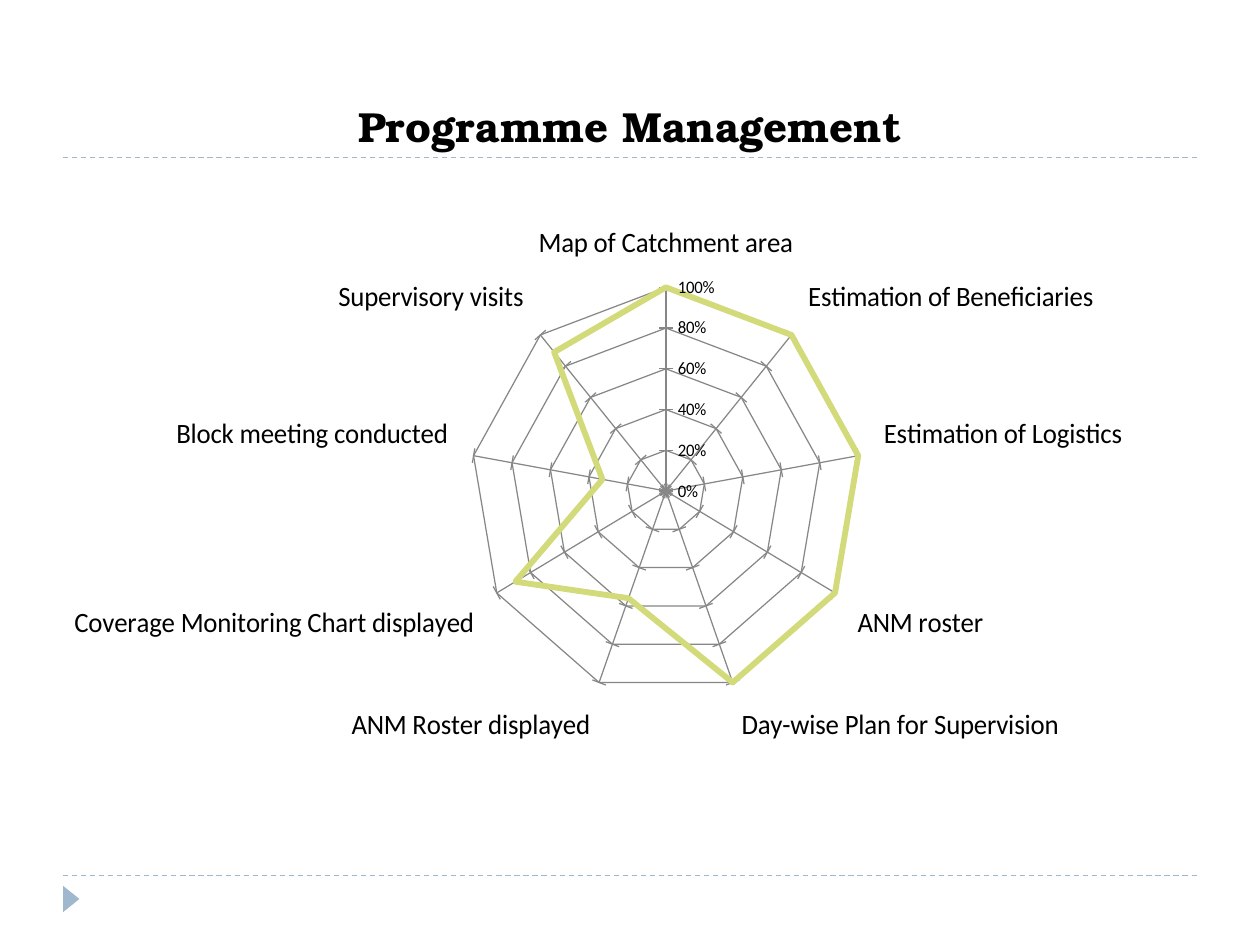
from dataclasses import dataclass

from lxml import etree
from pptx import Presentation
from pptx import util as u
from pptx.chart.chart import Chart
from pptx.chart.data import CategoryChartData
from pptx.dml.color import RGBColor
from pptx.enum import chart as charts
from pptx.enum import dml, shapes, text
from pptx.oxml import parse_xml
from pptx.oxml.ns import nsdecls, qn
from pptx.slide import Slide


@dataclass(frozen=True)
class Theme:
    ink: RGBColor = RGBColor(0x00, 0x00, 0x00)
    accent: RGBColor = RGBColor(0x9F, 0xB8, 0xCD)
    grid: RGBColor = RGBColor(0x87, 0x87, 0x87)
    series: RGBColor = RGBColor(0xD2, 0xDA, 0x7A)
    title_font: str = "TeX Gyre Bonum"
    chart_font: str = "Calibri"
    title_size: float = 24
    category_size: float = 16
    value_size: float = 10
    hairline: float = 0.75
    series_width: float = 3.5


@dataclass(frozen=True)
class Box:
    left: float
    top: float
    width: float
    height: float

    def points(self) -> tuple:
        return tuple(map(u.Pt, (self.left, self.top, self.width, self.height)))


@dataclass(frozen=True)
class Indicator:
    name: str
    share: float


THEME = Theme()
RULE_TOPS = (500.4, 90)
MARGIN = 36
CONTENT_WIDTH = 648
TITLE_BOX = Box(MARGIN, 12.24, CONTENT_WIDTH, 77.76)
CHART_BOX = Box(42.5, 71.3, CONTENT_WIDTH, 388.8)
MARKER_BOX = Box(33.12, 509.04, 15.12, 9.36)
PLOT_FRACTIONS = {"x": 0.285, "y": 0.239, "w": 0.432, "h": 0.599}
INDICATORS = (
    Indicator("Map of Catchment area", 1),
    Indicator("Estimation of Beneficiaries", 1),
    Indicator("Estimation of Logistics", 1),
    Indicator("ANM roster", 1),
    Indicator("Day-wise Plan for Supervision", 1),
    Indicator("ANM Roster displayed", 0.56),
    Indicator("Coverage Monitoring Chart displayed", 0.89),
    Indicator("Block meeting conducted", 0.33),
    Indicator("Supervisory visits", 0.89),
)


def add_rule(slide: Slide, top: float) -> None:
    rule = slide.shapes.add_connector(
        shapes.MSO_CONNECTOR.STRAIGHT,
        u.Pt(MARGIN), u.Pt(top), u.Pt(MARGIN + CONTENT_WIDTH), u.Pt(top),
    )
    rule.line.color.rgb = THEME.accent
    rule.line.width = u.Pt(THEME.hairline)
    rule.line.dash_style = dml.MSO_LINE.DASH
    etree.SubElement(rule._element.spPr, qn("a:effectLst"))


def add_marker(slide: Slide) -> None:
    marker = slide.shapes.add_shape(
        shapes.MSO_SHAPE.ISOSCELES_TRIANGLE, *MARKER_BOX.points()
    )
    marker.rotation = 90
    marker.shadow.inherit = False
    marker.fill.solid()
    marker.fill.fore_color.rgb = THEME.accent
    marker.line.fill.background()


def add_title(slide: Slide, wording: str) -> None:
    frame = slide.shapes.add_textbox(*TITLE_BOX.points()).text_frame
    frame.word_wrap = True
    frame.vertical_anchor = text.MSO_ANCHOR.BOTTOM
    frame.text = wording
    paragraph = frame.paragraphs[0]
    paragraph.alignment = text.PP_ALIGN.CENTER
    font = paragraph.runs[0].font
    font.name = THEME.title_font
    font.size = u.Pt(THEME.title_size)
    font.bold = True
    font.color.rgb = THEME.ink


def place_plot(chart: Chart) -> None:
    modes = "".join(f'<c:{axis}Mode val="edge"/>' for axis in "xy")
    sizes = "".join(
        f'<c:{key} val="{value}"/>' for key, value in PLOT_FRACTIONS.items()
    )
    layout = parse_xml(
        f'<c:layout {nsdecls("c")}><c:manualLayout><c:layoutTarget val="inner"/>'
        f"{modes}{sizes}</c:manualLayout></c:layout>"
    )
    plot_area = chart._chartSpace.chart.plotArea
    for existing in plot_area.findall(qn("c:layout")):
        plot_area.remove(existing)
    plot_area.insert(0, layout)


def style_axis(axis, size: float) -> None:
    axis.has_major_gridlines = True
    axis.major_tick_mark = charts.XL_TICK_MARK.CROSS
    axis.minor_tick_mark = charts.XL_TICK_MARK.NONE
    axis.tick_labels.font.size = u.Pt(size)
    for line in (axis.format.line, axis.major_gridlines.format.line):
        line.color.rgb = THEME.grid
        line.width = u.Pt(THEME.hairline)


def add_radar(slide: Slide) -> None:
    data = CategoryChartData(number_format="0%")
    data.categories = [indicator.name for indicator in INDICATORS]
    data.add_series("Series 1", [indicator.share for indicator in INDICATORS])
    chart = slide.shapes.add_chart(
        charts.XL_CHART_TYPE.RADAR, *CHART_BOX.points(), data
    ).chart
    chart.has_title = False
    chart.has_legend = False
    chart.font.name = THEME.chart_font
    chart.font.size = u.Pt(THEME.value_size)
    chart.font.color.rgb = THEME.ink
    plot = chart.plots[0]
    plot.vary_by_categories = False
    series = plot.series[0]
    series.smooth = False
    series.marker.style = charts.XL_MARKER_STYLE.NONE
    series.format.line.color.rgb = THEME.series
    series.format.line.width = u.Pt(THEME.series_width)
    style_axis(chart.category_axis, THEME.category_size)
    values = chart.value_axis
    style_axis(values, THEME.value_size)
    values.minimum_scale = 0
    values.maximum_scale = 1
    values.major_unit = 0.2
    values.tick_labels.number_format = "0%"
    values.tick_labels.number_format_is_linked = False
    place_plot(chart)


def main() -> None:
    presentation = Presentation()
    presentation.slide_width = u.Pt(720)
    presentation.slide_height = u.Pt(540)
    slide = presentation.slides.add_slide(presentation.slide_layouts[6])
    for top in RULE_TOPS:
        add_rule(slide, top)
    add_marker(slide)
    add_title(slide, "Programme Management")
    add_radar(slide)
    presentation.save("out.pptx")


if __name__ == "__main__":
    main()
